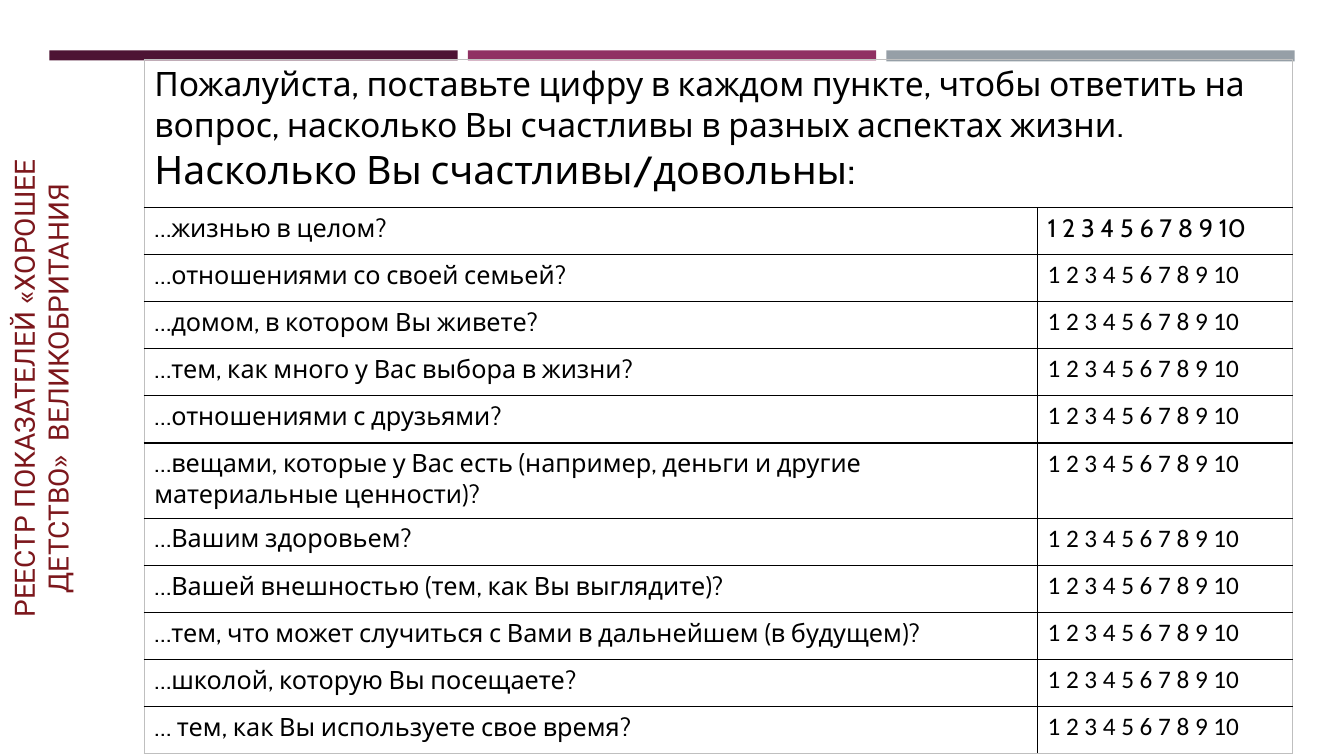
from dataclasses import dataclass

from lxml import etree
from pptx import Presentation
from pptx.dml.color import RGBColor
from pptx.enum import shapes, text
from pptx.oxml import ns
from pptx.util import Inches, Pt

COLORS = {
    "plum": "4D1434",
    "magenta": "903163",
    "grey": "969FA7",
    "title": "7C171C",
    "text": "000000",
    "grid": "000000",
    "frame": "BFBFBF",
}


@dataclass
class Bar:
    color: str
    height: float = 0.1


@dataclass
class Question:
    wording: str
    score_font: str = "Calibri"
    height: float = 0.467


BARS = [Bar("plum"), Bar("magenta"), Bar("grey", 0.11)]
BAR_LEFT, BAR_TOP, BAR_WIDTH, BAR_STEP = 0.49, 0.5, 4.05, 4.15

TITLE = "РЕЕСТР ПОКАЗАТЕЛЕЙ «ХОРОШЕЕ\vДЕТСТВО»  ВЕЛИКОБРИТАНИЯ"
INSTRUCTION = (
    "Пожалуйста, поставьте цифру в каждом пункте, чтобы ответить на вопрос, "
    "насколько Вы счастливы в разных аспектах жизни."
)
LEAD_IN = "Насколько Вы счастливы/довольны:"
SCALE = " ".join(str(score) for score in range(1, 11))
QUESTIONS = [
    Question("…жизнью в целом?", score_font="Cabin"),
    Question("…отношениями со своей семьей?"),
    Question("…домом, в котором Вы живете?"),
    Question("…тем, как много у Вас выбора в жизни?"),
    Question("…отношениями с друзьями?"),
    Question(
        "…вещами, которые у Вас есть (например, деньги и другие материальные ценности)?",
        height=0.75,
    ),
    Question("…Вашим здоровьем?"),
    Question("…Вашей внешностью (тем, как Вы выглядите)?"),
    Question("…тем, что может случиться с Вами в дальнейшем (в будущем)?"),
    Question("…школой, которую Вы посещаете?"),
    Question("… тем, как Вы используете свое время?"),
]
HEADER_HEIGHT = 1.47
COLUMN_WIDTHS = [8.86, 2.53]


def write(paragraph, wording: str, *, size: float = 18, font: str = "Cabin",
          color: str = "text", align=None) -> None:
    paragraph.text = wording
    paragraph.alignment = align
    for run in paragraph.runs:
        run.font.size = Pt(size)
        run.font.name = font
        run.font.color.rgb = RGBColor.from_string(COLORS[color])


def draw_bar(slide, bar: Bar, index: int) -> None:
    shape = slide.shapes.add_shape(
        shapes.MSO_SHAPE.RECTANGLE, Inches(BAR_LEFT + index * BAR_STEP),
        Inches(BAR_TOP), Inches(BAR_WIDTH), Inches(bar.height))
    shape.shadow.inherit = False
    shape.fill.solid()
    shape.fill.fore_color.rgb = RGBColor.from_string(COLORS[bar.color])
    shape.line.fill.background()


def draw_title(slide) -> None:
    shape = slide.shapes.add_textbox(
        Inches(-3.25), Inches(3.46), Inches(7.28), Inches(0.79))
    shape.rotation = 270
    frame = shape.text_frame
    frame.word_wrap = True
    frame.vertical_anchor = text.MSO_ANCHOR.BOTTOM
    write(frame.paragraphs[0], TITLE, size=20, font="Roboto", color="title",
          align=text.PP_ALIGN.CENTER)


def set_borders(cell, colors: dict[str, str]) -> None:
    """Give each side (L, R, T, B, in that order) a one-point line."""
    properties = cell._tc.get_or_add_tcPr()
    for position, (side, color) in enumerate(colors.items()):
        line = etree.Element(ns.qn(f"a:ln{side}"), w=str(Pt(1)))
        fill = etree.SubElement(line, ns.qn("a:solidFill"))
        etree.SubElement(fill, ns.qn("a:srgbClr"), val=COLORS[color])
        properties.insert(position, line)


def draw_questionnaire(slide) -> None:
    heights = [HEADER_HEIGHT] + [question.height for question in QUESTIONS]
    table = slide.shapes.add_table(
        len(heights), len(COLUMN_WIDTHS), Inches(1.43), Inches(0.59),
        Inches(sum(COLUMN_WIDTHS)), Inches(sum(heights))).table
    table.first_row = False
    table.horz_banding = False
    for column, width in zip(table.columns, COLUMN_WIDTHS):
        column.width = Inches(width)
    for row, height in zip(table.rows, heights):
        row.height = Inches(height)

    header = table.cell(0, 0)
    header.merge(table.cell(0, 1))
    write(header.text_frame.paragraphs[0], INSTRUCTION, size=24)
    write(header.text_frame.add_paragraph(), LEAD_IN, size=28)

    for index, question in enumerate(QUESTIONS, start=1):
        wording, score = table.rows[index].cells
        write(wording.text_frame.paragraphs[0], question.wording)
        write(score.text_frame.paragraphs[0], SCALE, font=question.score_font)

    last = len(heights) - 1
    for index, row in enumerate(table.rows):
        for column, cell in enumerate(row.cells):
            cell.fill.background()
            set_borders(cell, {
                "L": "frame" if column == 0 else "grid",
                "R": "frame" if column == 1 or index == 0 else "grid",
                "T": "frame" if index == 0 else "grid",
                "B": "frame" if index == last else "grid",
            })


def main() -> None:
    presentation = Presentation()
    presentation.slide_width = Inches(13.33)
    presentation.slide_height = Inches(7.5)
    slide = presentation.slides.add_slide(presentation.slide_layouts[6])
    for index, bar in enumerate(BARS):
        draw_bar(slide, bar, index)
    draw_title(slide)
    draw_questionnaire(slide)
    presentation.save("out.pptx")


if __name__ == "__main__":
    main()
